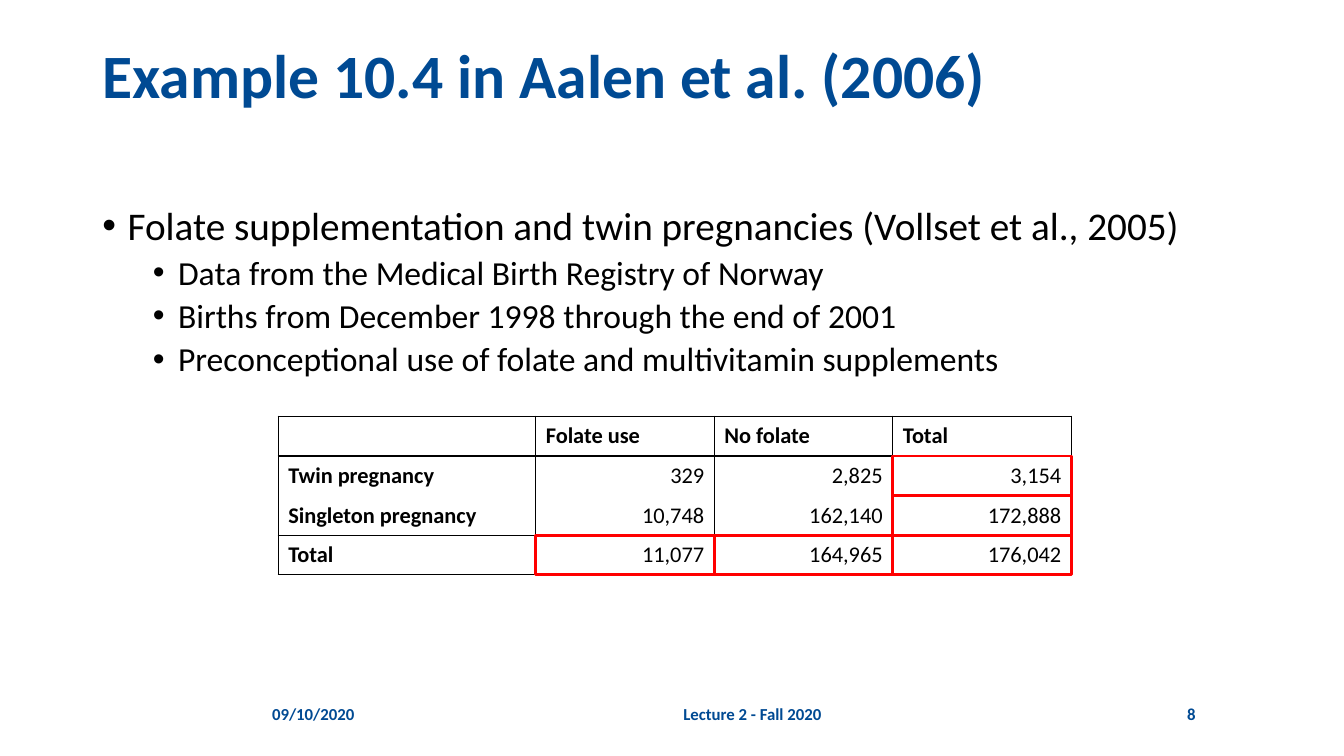
import dataclasses
import typing

import lxml.etree
import pptx
import pptx.dml.color
import pptx.enum.shapes
import pptx.enum.text
import pptx.oxml.ns
import pptx.util

SLIDE_WIDTH = pptx.util.Inches(13.333)
SLIDE_HEIGHT = pptx.util.Inches(7.5)
GRID_COLUMNS = 80
GRID_ROWS = 45
FONT = "Calibri"
COLOURS = {"heading": "004A93", "text": "000000", "highlight": "FF0000"}
ALIGN = pptx.enum.text.PP_ALIGN
ANCHOR = pptx.enum.text.MSO_ANCHOR


def across(columns: float) -> int:
    return round(SLIDE_WIDTH * columns / GRID_COLUMNS)


def down(rows: float) -> int:
    return round(SLIDE_HEIGHT * rows / GRID_ROWS)


@dataclasses.dataclass(frozen=True)
class Area:
    column: float
    row: float
    columns: float
    rows: float

    def lengths(self) -> tuple[int, int, int, int]:
        return across(self.column), down(self.row), across(self.columns), down(self.rows)


@dataclasses.dataclass(frozen=True)
class Bullet:
    text: str
    level: int
    space_before: int


@dataclasses.dataclass(frozen=True)
class FooterItem:
    text: str
    column: float
    columns: float
    alignment: ALIGN


TITLE = "Example 10.4 in Aalen et al. (2006)"
TITLE_AREA = Area(5.5, 2.4, 69, 8.7)
BODY_AREA = Area(5.5, 12, 69, 24)
BULLETS = [
    Bullet("Folate supplementation and twin pregnancies (Vollset et al., 2005)", 0, 0),
    Bullet("Data from the Medical Birth Registry of Norway", 1, 5),
    Bullet("Births from December 1998 through the end of 2001", 1, 5),
    Bullet("Preconceptional use of folate and multivitamin supplements", 1, 5),
]
BULLET_SIZES = [28, 24]

FOOTER_ROW = 41.28
FOOTER_ROWS = 2.4
FOOTER = [
    FooterItem("09/10/2020", 15.6, 7.86, ALIGN.LEFT),
    FooterItem("Lecture 2 - Fall 2020", 24.42, 40.74, ALIGN.CENTER),
    FooterItem("8", 66.12, 5.64, ALIGN.RIGHT),
]

COUNTS = [
    ["", "Folate use", "No folate", "Total"],
    ["Twin pregnancy", "329", "2,825", "3,154"],
    ["Singleton pregnancy", "10,748", "162,140", "172,888"],
    ["Total", "11,077", "164,965", "176,042"],
]
TABLE_COLUMN = 16.56
TABLE_ROW = 24.78
LABEL_COLUMNS = 15.33
COUNT_COLUMNS = 10.63
COUNT_ROWS = 2.36
TWIN_ROW, SINGLETON_ROW = 1, 2
MARGINAL_CELLS = [(3, 3), (1, 3), (2, 3), (3, 1), (3, 2)]


def colour(name: str) -> pptx.dml.color.RGBColor:
    return pptx.dml.color.RGBColor.from_string(COLOURS[name])


def add_run(paragraph: typing.Any, text: str, size: int, colour_name: str, bold: bool) -> None:
    run = paragraph.add_run()
    run.text = text
    run.font.name = FONT
    run.font.size = pptx.util.Pt(size)
    run.font.bold = bold
    run.font.color.rgb = colour(colour_name)


def place(shape: typing.Any, area: Area) -> None:
    shape.left, shape.top, shape.width, shape.height = area.lengths()


def add_title(slide: typing.Any) -> None:
    shape = slide.shapes.title
    place(shape, TITLE_AREA)
    frame = shape.text_frame
    frame.auto_size = pptx.enum.text.MSO_AUTO_SIZE.NONE
    frame.vertical_anchor = ANCHOR.TOP
    paragraph = frame.paragraphs[0]
    paragraph.alignment = ALIGN.LEFT
    paragraph.line_spacing = 0.9
    add_run(paragraph, TITLE, 44, "heading", True)


def add_bullets(slide: typing.Any) -> None:
    shape = slide.placeholders[1]
    place(shape, BODY_AREA)
    frame = shape.text_frame
    frame.auto_size = pptx.enum.text.MSO_AUTO_SIZE.NONE
    for index, bullet in enumerate(BULLETS):
        paragraph = frame.add_paragraph() if index else frame.paragraphs[0]
        paragraph.level = bullet.level
        paragraph.line_spacing = 0.9
        paragraph.space_before = pptx.util.Pt(bullet.space_before)
        properties = paragraph._p.get_or_add_pPr()
        properties.set("marL", str(pptx.util.Inches(0.25 + 0.5 * bullet.level)))
        properties.set("indent", str(pptx.util.Inches(-0.25)))
        font = lxml.etree.SubElement(properties, pptx.oxml.ns.qn("a:buFont"))
        font.set("typeface", "Arial")
        mark = lxml.etree.SubElement(properties, pptx.oxml.ns.qn("a:buChar"))
        mark.set("char", "•")
        add_run(paragraph, bullet.text, BULLET_SIZES[bullet.level], "text", False)


def add_footer_item(slide: typing.Any, item: FooterItem) -> None:
    area = Area(item.column, FOOTER_ROW, item.columns, FOOTER_ROWS)
    frame = slide.shapes.add_textbox(*area.lengths()).text_frame
    frame.word_wrap = True
    frame.vertical_anchor = ANCHOR.MIDDLE
    paragraph = frame.paragraphs[0]
    paragraph.alignment = item.alignment
    add_run(paragraph, item.text, 12, "heading", True)


def set_borders(cell: typing.Any, open_side: str) -> None:
    properties = cell._tc.get_or_add_tcPr()
    for index, side in enumerate("LRTB"):
        line = lxml.etree.Element(pptx.oxml.ns.qn(f"a:ln{side}"), w=str(pptx.util.Pt(1)))
        if side == open_side:
            lxml.etree.SubElement(line, pptx.oxml.ns.qn("a:noFill"))
        else:
            fill = lxml.etree.SubElement(line, pptx.oxml.ns.qn("a:solidFill"))
            lxml.etree.SubElement(fill, pptx.oxml.ns.qn("a:srgbClr"), val=COLOURS["text"])
        properties.insert(index, line)


def add_counts_table(slide: typing.Any) -> None:
    row_count, column_count = len(COUNTS), len(COUNTS[0])
    width = LABEL_COLUMNS + COUNT_COLUMNS * (column_count - 1)
    area = Area(TABLE_COLUMN, TABLE_ROW, width, COUNT_ROWS * row_count)
    table = slide.shapes.add_table(row_count, column_count, *area.lengths()).table
    table.first_row = table.horz_banding = False
    for index, column in enumerate(table.columns):
        column.width = across(COUNT_COLUMNS if index else LABEL_COLUMNS)
    open_sides = {TWIN_ROW: "B", SINGLETON_ROW: "T"}
    for row_index, values in enumerate(COUNTS):
        table.rows[row_index].height = down(COUNT_ROWS)
        for column_index, value in enumerate(values):
            cell = table.cell(row_index, column_index)
            cell.margin_top = cell.margin_bottom = 0
            cell.vertical_anchor = ANCHOR.MIDDLE
            cell.fill.background()
            set_borders(cell, open_sides.get(row_index, ""))
            is_heading = row_index == 0 or column_index == 0
            paragraph = cell.text_frame.paragraphs[0]
            paragraph.alignment = ALIGN.LEFT if is_heading else ALIGN.RIGHT
            if value:
                add_run(paragraph, value, 16, "text", is_heading)


def add_highlight(slide: typing.Any, row: int, column: int) -> None:
    left = TABLE_COLUMN + LABEL_COLUMNS + COUNT_COLUMNS * (column - 1)
    area = Area(left, TABLE_ROW + COUNT_ROWS * row, COUNT_COLUMNS, COUNT_ROWS)
    shape = slide.shapes.add_shape(pptx.enum.shapes.MSO_SHAPE.RECTANGLE, *area.lengths())
    shape.shadow.inherit = False
    shape.fill.background()
    shape.line.color.rgb = colour("highlight")
    shape.line.width = pptx.util.Pt(2)


def main() -> None:
    presentation = pptx.Presentation()
    presentation.slide_width, presentation.slide_height = SLIDE_WIDTH, SLIDE_HEIGHT
    slide = presentation.slides.add_slide(presentation.slide_layouts[1])
    add_title(slide)
    add_bullets(slide)
    for item in FOOTER:
        add_footer_item(slide, item)
    add_counts_table(slide)
    for row, column in MARGINAL_CELLS:
        add_highlight(slide, row, column)
    presentation.save("out.pptx")


if __name__ == "__main__":
    main()
